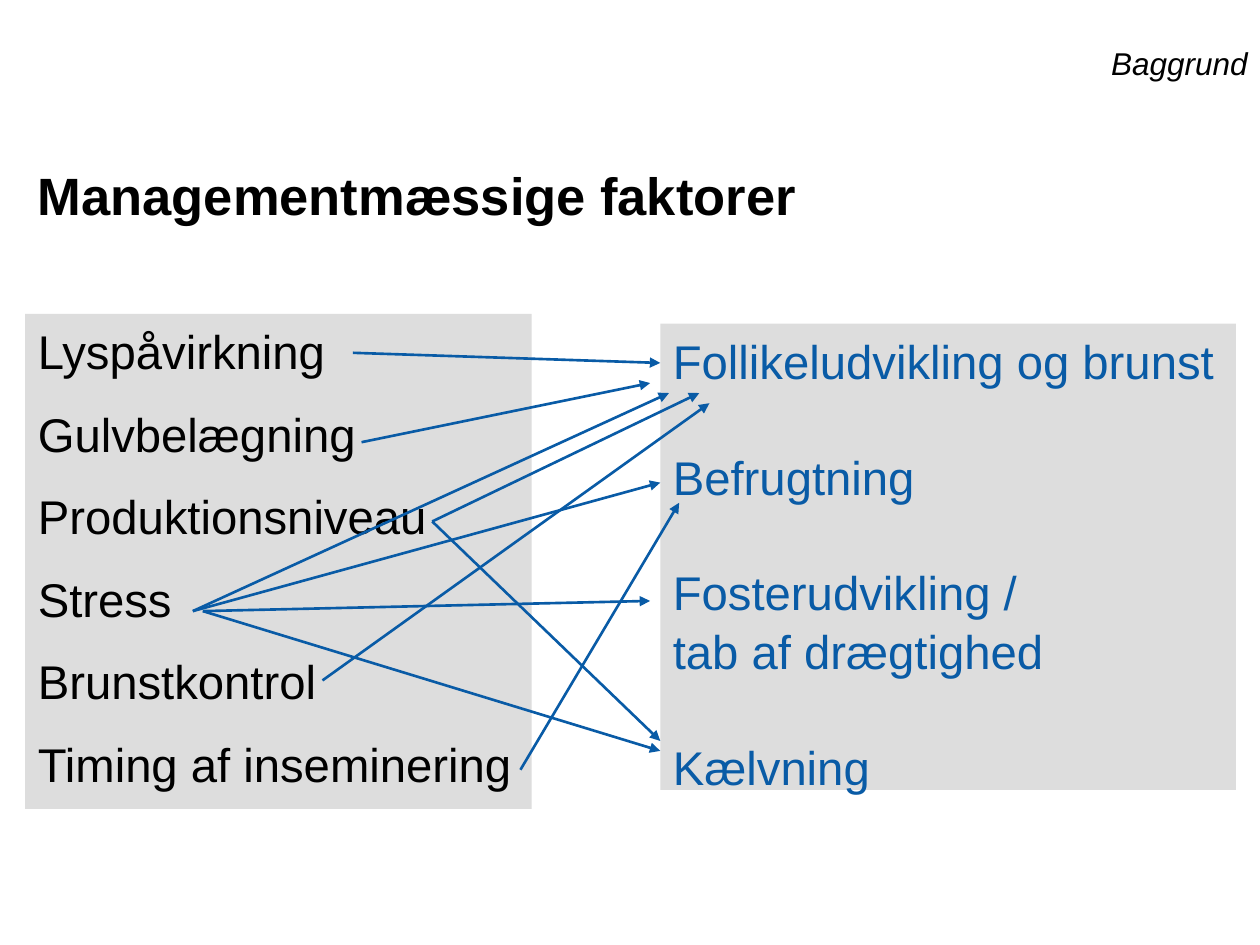
from pptx import Presentation
from pptx import util as u
from pptx.dml.color import RGBColor
from pptx.enum import shapes, text
from pptx.oxml.ns import qn
from lxml import etree

BLACK = RGBColor(0x00, 0x00, 0x00)
BLUE = RGBColor(0x09, 0x5B, 0xA6)
GREY = RGBColor(0xDD, 0xDD, 0xDD)

FACTORS = ["Lyspåvirkning", "Gulvbelægning", "Produktionsniveau",
           "Stress", "Brunstkontrol", "Timing af inseminering"]
OUTCOMES = ["Follikeludvikling og brunst", "Befrugtning",
            "Fosterudvikling /", "tab af drægtighed", "Kælvning"]
ARROWS = [
    ((247, 298), (399.6, 224.6)),
    ((201.6, 201.6), (377.3, 207.4)),
    ((110.2, 349.2), (382.3, 224.6)),
    ((110.2, 349.2), (377.3, 275.8)),
    ((115.9, 349.2), (371.5, 343.4)),
    ((115.9, 349.2), (377.3, 429.1)),
    ((206.6, 252.7), (371.5, 218.9)),
    ((247, 298), (377.3, 423.4)),
    ((184.3, 388.8), (405.4, 230.4)),
    ((297.4, 439.9), (388.1, 287.3)),
]


class FactorSlide:
    font_name = "Arial"
    list_size = 27
    line_spacing = 1.04

    def __init__(self, deck):
        self.page = deck.slides.add_slide(deck.slide_layouts[3])

    def place(self, box, left, top, width, height):
        box.left, box.top = u.Pt(left), u.Pt(top)
        box.width, box.height = u.Pt(width), u.Pt(height)

    def style(self, para, size, color, bold=False, italic=False):
        for span in para.runs:
            font = span.font
            font.name, font.size = self.font_name, u.Pt(size)
            font.bold, font.italic = bold, italic
            font.color.rgb = color

    def title(self, wording, *area):
        box = self.page.shapes.title
        self.place(box, *area)
        frame = box.text_frame
        frame.text = wording
        frame.auto_size = text.MSO_AUTO_SIZE.NONE
        frame.vertical_anchor = text.MSO_ANCHOR.MIDDLE
        para = frame.paragraphs[0]
        para.alignment = text.PP_ALIGN.LEFT
        self.style(para, 30, BLACK, bold=True)

    def panel(self, index, lines, gaps, color, *area):
        box = self.page.placeholders[index]
        self.place(box, *area)
        box.fill.solid()
        box.fill.fore_color.rgb = GREY
        frame = box.text_frame
        frame.text = "\n".join(lines)
        frame.auto_size = text.MSO_AUTO_SIZE.NONE
        for para, gap in zip(frame.paragraphs, gaps):
            para.line_spacing = self.line_spacing
            para.space_before = u.Pt(gap)
            properties = para._p.get_or_add_pPr()
            properties.set("marL", "0")
            properties.set("indent", "0")
            etree.SubElement(properties, qn("a:buNone"))
            self.style(para, self.list_size, color)

    def arrows(self, routes):
        group = self.page.shapes.add_group_shape()
        for start, end in routes:
            arrow = group.shapes.add_connector(
                shapes.MSO_CONNECTOR.STRAIGHT,
                *(u.Pt(value) for value in start + end))
            arrow.line.color.rgb = BLUE
            arrow.line.width = u.Pt(1.5)
            outline = arrow.line._get_or_add_ln()
            etree.SubElement(outline, qn("a:tailEnd"), type="triangle")
            etree.SubElement(arrow._element.spPr, qn("a:effectLst"))

    def label(self, wording, *area):
        box = self.page.shapes.add_textbox(*(u.Pt(value) for value in area))
        box.text_frame.word_wrap = True
        box.text_frame.text = wording
        para = box.text_frame.paragraphs[0]
        para.alignment = text.PP_ALIGN.RIGHT
        self.style(para, 18, BLACK, italic=True)


def main():
    deck = Presentation()
    deck.slide_width, deck.slide_height = u.Pt(720), u.Pt(540)
    slide = FactorSlide(deck)
    slide.title("Managementmæssige faktorer", 14.4, 66.2, 619.2, 90)
    slide.panel(2, OUTCOMES, [0, 32.4, 32.4, 0, 32.4], BLUE,
                377.3, 185, 329, 266.4)
    slide.panel(1, FACTORS, [0] + [13.5] * 5, BLACK,
                14.4, 179.3, 289.4, 283)
    slide.arrows(ARROWS)
    slide.label("Baggrund", 598.3, 21.6, 121.7, 50.4)
    deck.save("out.pptx")


if __name__ == "__main__":
    main()
